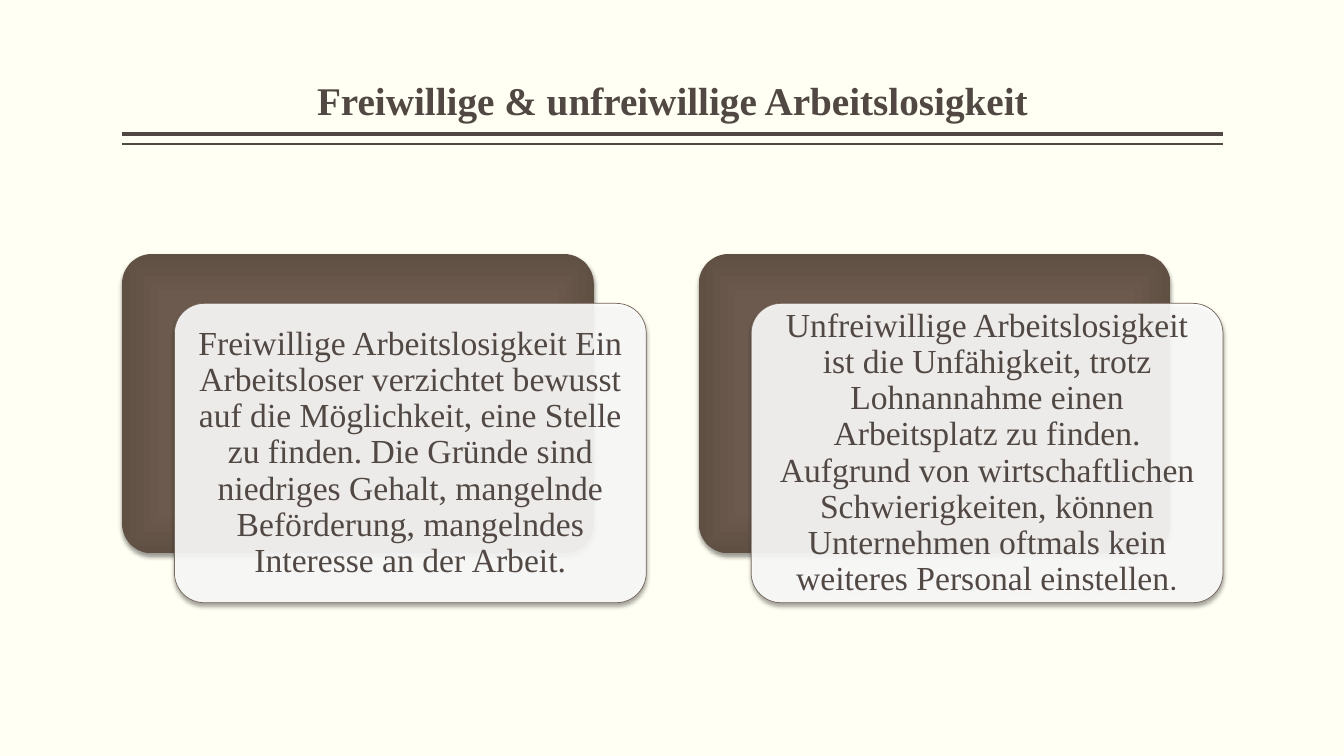
from lxml import etree
from pptx import Presentation
from pptx.dml.color import RGBColor
from pptx.enum import shapes, text
from pptx.oxml import parse_xml
from pptx.oxml.ns import nsdecls, qn
from pptx.util import Inches, Pt

CREAM = RGBColor(0xFF, 0xFF, 0xF3)
INK = RGBColor(0x51, 0x48, 0x43)
EDGE = RGBColor(0x76, 0x67, 0x5D)
WHITE = RGBColor(0xFF, 0xFF, 0xFF)
BROWNS = [(0, RGBColor(0x6C, 0x5B, 0x4E)), (71, RGBColor(0x6B, 0x5A, 0x4D)),
          (100, RGBColor(0x60, 0x50, 0x44))]
SERIF = "Times New Roman"
LEFT, WIDTH = 1.21, 10.92
CARD_W, CARD_H = 4.68, 2.97
SHIFT_X, SHIFT_Y = 0.52, 0.49

TITLE = "Freiwillige & unfreiwillige Arbeitslosigkeit"
CARDS = [
    [("Freiwillige Arbeitslosigkeit Ein Arbeitsloser verzichtet bewusst auf "
      "die Möglichkeit, eine Stelle zu finden. Die Gründe sind niedriges "
      "Gehalt, mangelnde Beförderung, mangelndes Interesse an der Arbeit.",
      24, SERIF)],
    [("Unfreiwillige Arbeitslosigkeit ist die Unfähigkeit, trotz Lohnannahme "
      "einen Arbeitsplatz zu finden. Aufgrund von wirtschaftlichen "
      "Schwierigkeiten, können Unternehmen oftmals kein weiteres Personal "
      "einstellen", 24, SERIF), (".", 23, "Roboto")],
]


def write(frame, runs, bold=False, anchor=text.MSO_ANCHOR.MIDDLE, pad=(0.1, 0.04)):
    """Fill a frame with one centred paragraph of (words, size, font) runs."""
    frame.word_wrap = True
    frame.auto_size = text.MSO_AUTO_SIZE.NONE
    frame.vertical_anchor = anchor
    frame.margin_left = frame.margin_right = Inches(pad[0])
    frame.margin_top = frame.margin_bottom = Inches(pad[1])
    para = frame.paragraphs[0]
    para.alignment = text.PP_ALIGN.CENTER
    para.line_spacing = 0.9
    for words, size, face in runs:
        run = para.add_run()
        run.text = words
        run.font.size, run.font.name, run.font.bold = Pt(size), face, bold
        run.font.color.rgb = INK


def add_shade(shape):
    shape._element.spPr.append(parse_xml(
        f'<a:effectLst {nsdecls("a")}><a:outerShdw blurRad="{Pt(3.1)}" '
        f'dist="{Pt(2)}" dir="5400000" rotWithShape="0"><a:srgbClr val="000000">'
        '<a:alpha val="38000"/></a:srgbClr></a:outerShdw></a:effectLst>'))


def add_glow(shape):
    """Give the shape a brown gradient that darkens towards its edges."""
    stops = "".join(f'<a:gs pos="{pos * 1000}"><a:srgbClr val="{tone}"/></a:gs>'
                    for pos, tone in BROWNS)
    grad = parse_xml(
        f'<a:gradFill {nsdecls("a")} rotWithShape="1"><a:gsLst>{stops}</a:gsLst>'
        '<a:path path="rect"><a:fillToRect l="50000" t="50000" r="50000" '
        'b="50000"/></a:path></a:gradFill>')
    props = shape._element.spPr
    props.replace(props.find(qn("a:solidFill")), grad)


def add_panel(slide, x, y, fill):
    panel = slide.shapes.add_shape(
        shapes.MSO_SHAPE.ROUNDED_RECTANGLE,
        Inches(x), Inches(y), Inches(CARD_W), Inches(CARD_H))
    panel.adjustments[0] = 0.1
    panel.fill.solid()
    panel.fill.fore_color.rgb = fill
    panel.line.fill.background()
    add_shade(panel)
    return panel


def add_card(slide, x, y, runs):
    add_glow(add_panel(slide, x, y, BROWNS[0][1]))
    front = add_panel(slide, x + SHIFT_X, y + SHIFT_Y, WHITE)
    tone = front._element.spPr.find(qn("a:solidFill"))[0]
    etree.SubElement(tone, qn("a:alpha")).set("val", "90000")
    front.line.color.rgb = EDGE
    front.line.width = Pt(0.5)
    write(front.text_frame, runs)


def add_rule(slide, x, y, width, weight):
    rule = slide.shapes.add_connector(
        shapes.MSO_CONNECTOR.STRAIGHT,
        Inches(x), Inches(y), Inches(x + width), Inches(y))
    rule.line.color.rgb = INK
    rule.line.width = Pt(weight)
    etree.SubElement(rule._element.spPr, qn("a:effectLst"))


def add_head(slide, x, y, width, height):
    title = slide.shapes.title
    title.left, title.top = Inches(x), Inches(y)
    title.width, title.height = Inches(width), Inches(height)
    write(title.text_frame, [(TITLE, 28, SERIF)], bold=True,
          anchor=text.MSO_ANCHOR.BOTTOM, pad=(0, 0.05))
    for drop, weight in ((0.05, 3), (0.15, 1)):
        add_rule(slide, x, y + height + drop, width, weight)


def main():
    deck = Presentation()
    deck.slide_width, deck.slide_height = Inches(13.33), Inches(7.5)
    slide = deck.slides.add_slide(deck.slide_layouts[5])
    slide.background.fill.solid()
    slide.background.fill.fore_color.rgb = CREAM
    add_head(slide, LEFT, 0.08, WIDTH, 1.2)
    step = WIDTH - CARD_W - SHIFT_X
    for i, runs in enumerate(CARDS):
        add_card(slide, LEFT + i * step, 2.52, runs)
    deck.save("out.pptx")


if __name__ == "__main__":
    main()
